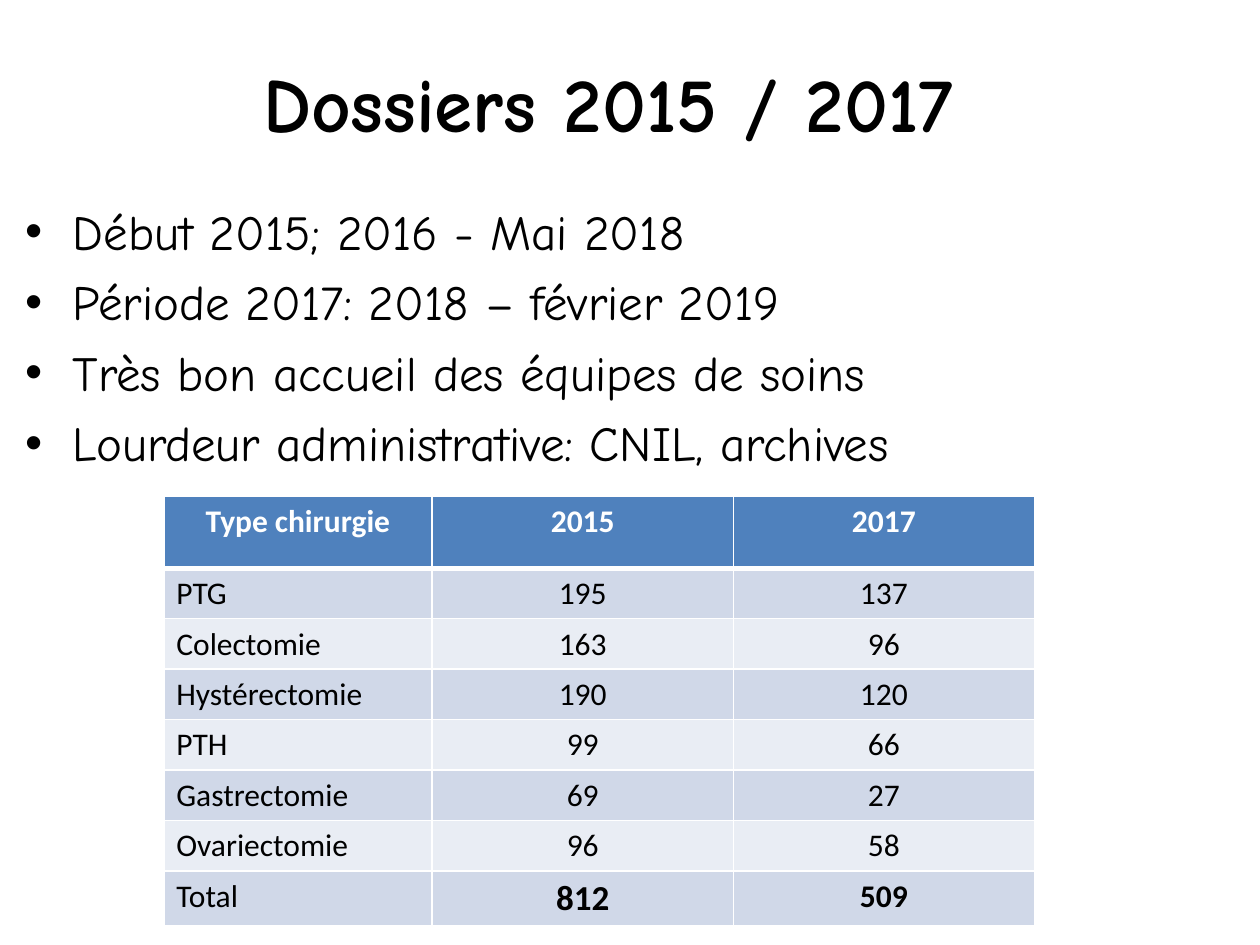
from dataclasses import dataclass

from lxml import etree
from pptx import Presentation
from pptx.dml.color import RGBColor
from pptx.enum.text import MSO_ANCHOR, PP_ALIGN
from pptx.oxml.ns import qn
from pptx.util import Inches, Pt

LEFT, CENTER, JUSTIFY = PP_ALIGN.LEFT, PP_ALIGN.CENTER, PP_ALIGN.JUSTIFY
MIDDLE = MSO_ANCHOR.MIDDLE

BLACK = RGBColor(0x00, 0x00, 0x00)
WHITE = RGBColor(0xFF, 0xFF, 0xFF)
HEADER_BLUE = RGBColor(0x4F, 0x81, 0xBD)
BAND_DARK = RGBColor(0xD0, 0xD8, 0xE8)
BAND_LIGHT = RGBColor(0xE9, 0xED, 0xF4)

TEXT_FONT = "Comic Neue"
TABLE_FONT = "Calibri"


@dataclass(frozen=True)
class TextStyle:
    font: str
    size: float
    color: RGBColor = BLACK
    bold: bool = False


TITLE = TextStyle(TEXT_FONT, 44, bold=True)
BULLET = TextStyle(TEXT_FONT, 28)
HEADER = TextStyle(TABLE_FONT, 18, WHITE, bold=True)
BODY = TextStyle(TABLE_FONT, 18)
TOTAL = TextStyle(TABLE_FONT, 18, bold=True)
GRAND_TOTAL = TextStyle(TABLE_FONT, 20, bold=True)

BULLETS = [
    "Début 2015; 2016 - Mai 2018",
    "Période 2017: 2018 – février 2019",
    "Très bon accueil des équipes de soins",
    "Lourdeur administrative: CNIL, archives",
]
SURGERIES = [
    ("Type chirurgie", "2015", "2017"),
    ("PTG", "195", "137"),
    ("Colectomie", "163", "96"),
    ("Hystérectomie", "190", "120"),
    ("PTH", "99", "66"),
    ("Gastrectomie", "69", "27"),
    ("Ovariectomie", "96", "58"),
    ("Total", "812", "509"),
]
COLUMN_WIDTHS = [2.13, 2.39, 2.39]
HEADER_HEIGHT, ROW_HEIGHT = 0.57, 0.4


def write(para, text: str, style: TextStyle, align) -> None:
    para.text = text
    para.alignment = align
    font = para.font
    font.name = style.font
    font.size = Pt(style.size)
    font.bold = style.bold
    font.color.rgb = style.color


def add_text_frame(page, left: float, top: float, width: float, height: float):
    box = page.shapes.add_textbox(
        Inches(left), Inches(top), Inches(width), Inches(height))
    box.text_frame.word_wrap = True
    return box.text_frame


def add_bullet(para) -> None:
    """Give the paragraph a round bullet with a hanging indent."""
    properties = para._p.get_or_add_pPr()
    properties.set("marL", str(Inches(0.38)))
    properties.set("indent", str(-Inches(0.38)))
    etree.SubElement(properties, qn("a:buFont")).set("typeface", "Arial")
    etree.SubElement(properties, qn("a:buChar")).set("char", "•")


def add_border(cell, side: str, width: float) -> None:
    line = etree.SubElement(cell._tc.get_or_add_tcPr(), qn(f"a:ln{side}"))
    line.set("w", str(Pt(width)))
    fill = etree.SubElement(line, qn("a:solidFill"))
    etree.SubElement(fill, qn("a:srgbClr")).set("val", str(WHITE))


def cell_style(row: int, column: int) -> TextStyle:
    if row == 0:
        return HEADER
    if row == len(SURGERIES) - 1 and column > 0:
        return GRAND_TOTAL if column == 1 else TOTAL
    return BODY


def add_surgery_table(page, left: float, top: float) -> None:
    heights = [HEADER_HEIGHT] + [ROW_HEIGHT] * (len(SURGERIES) - 1)
    table = page.shapes.add_table(
        len(SURGERIES), len(COLUMN_WIDTHS), Inches(left), Inches(top),
        Inches(sum(COLUMN_WIDTHS)), Inches(sum(heights))).table
    for column, width in zip(table.columns, COLUMN_WIDTHS):
        column.width = Inches(width)
    for row, height in zip(table.rows, heights):
        row.height = Inches(height)

    for r, values in enumerate(SURGERIES):
        band = BAND_DARK if r % 2 else BAND_LIGHT
        for c, value in enumerate(values):
            cell = table.cell(r, c)
            for side in "LRTB":
                under_header = (r, side) in ((0, "B"), (1, "T"))
                add_border(cell, side, 3 if under_header else 1)
            cell.fill.solid()
            cell.fill.fore_color.rgb = HEADER_BLUE if r == 0 else band
            align = LEFT if r > 0 and c == 0 else CENTER
            write(cell.text_frame.paragraphs[0], value, cell_style(r, c), align)


def main() -> None:
    deck = Presentation()
    deck.slide_width, deck.slide_height = Inches(10), Inches(7.5)
    page = deck.slides.add_slide(deck.slide_layouts[6])

    title = add_text_frame(page, 0.33, 0.18, 9, 1.25)
    title.vertical_anchor = MIDDLE
    write(title.paragraphs[0], "Dossiers 2015 / 2017", TITLE, CENTER)

    body = add_text_frame(page, 0.1, 1.55, 9.72, 4.65)
    for index, text in enumerate(BULLETS):
        para = body.add_paragraph() if index else body.paragraphs[0]
        para.space_before = Pt(6.6)
        add_bullet(para)
        write(para, text, BULLET, JUSTIFY)

    add_surgery_table(page, 1.3, 3.94)
    deck.save("out.pptx")


if __name__ == "__main__":
    main()
